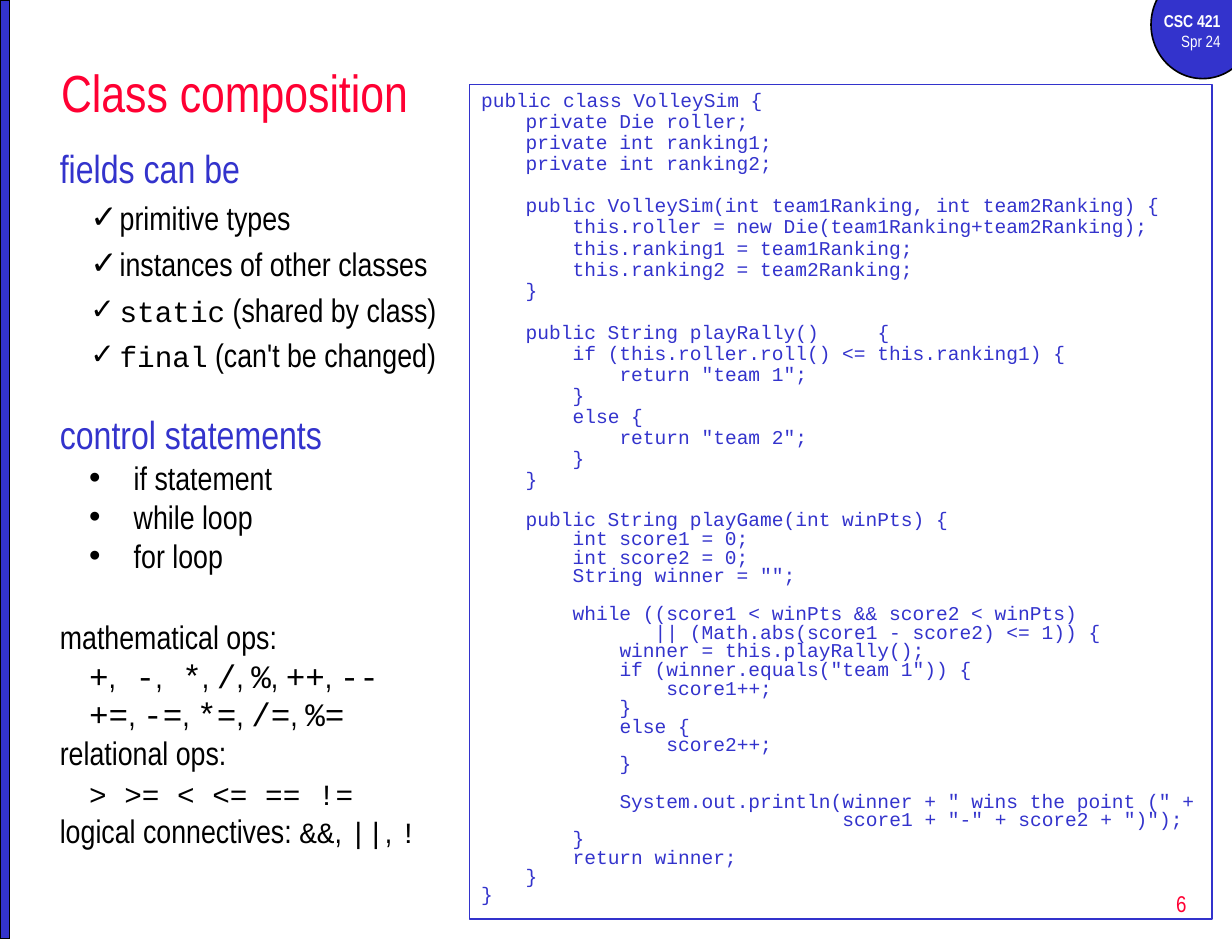
import pptx
import pptx.util
import pptx.dml.color
import pptx.enum.shapes
import pptx.enum.text
import pptx.oxml.ns
import lxml.etree

Inches, Pt = pptx.util.Inches, pptx.util.Pt
RGBColor = pptx.dml.color.RGBColor
ALIGN = pptx.enum.text.PP_ALIGN
ANCHOR = pptx.enum.text.MSO_ANCHOR
SHAPE = pptx.enum.shapes.MSO_SHAPE

BLUE = RGBColor(0x33, 0x33, 0xCC)
RED = RGBColor(0xFF, 0x00, 0x33)
BLACK = RGBColor(0, 0, 0)
WHITE = RGBColor(0xFF, 0xFF, 0xFF)
SANS, MONO = "Arial Narrow", "Courier New"

# Content: `...` marks code
TITLE = "Class composition"
COURSE = [("CSC 421", 10.5, True), ("Spr 24", 10, False)]
PAGE = "6"

# Style: size, code size, colour, line height, left margin, first indent, bullet
STYLES = {
    "heading": (24, 24, BLUE, 29, 0, 0, None),
    "check": (20, 18, BLACK, 24, 0.51, -0.25, "✓"),
    "dot": (20, 18, BLACK, 24, 0.63, -0.38, "•"),
    "plain": (20, 18, BLACK, 24, 0, 0, None),
    "math": (20, 20, BLACK, 23.5, 0.25, 0, None),
    "relations": (20, 18, BLACK, 24, 0.25, 0, None),
}
# Style, space before in points, text
NOTES = [
    ("heading", 0, "fields can be"),
    ("check", 4, "primitive types"),
    ("check", 4, "instances of other classes"),
    ("check", 4, "`static` (shared by class)"),
    ("check", 4, "`final` (can't be changed)"),
    ("heading", 22, "control statements"),
    ("dot", 0, "if statement"),
    ("dot", 0, "while loop"),
    ("dot", 0, "for loop"),
    ("plain", 26, "mathematical ops:"),
    ("math", 0, "`+`,` -`,` *`, `/`, `%`, `++`, `--`"),
    ("math", 0, "`+=`, `-=`, `*=`, `/=`, `%=`"),
    ("plain", 0, "relational ops:"),
    ("relations", 0, "`> >= < <= == !=`"),
    ("plain", 0, "logical connectives: `&&`, `||`, `!`"),
]

# Class source in two parts, each with its line height in points
CODE = [
    (12.94, """public class VolleySim {
    private Die roller;
    private int ranking1;
    private int ranking2;

    public VolleySim(int team1Ranking, int team2Ranking) {
        this.roller = new Die(team1Ranking+team2Ranking);
        this.ranking1 = team1Ranking;
        this.ranking2 = team2Ranking;
    }

    public String playRally() \t{
        if (this.roller.roll() <= this.ranking1) {
            return "team 1";
        }
        else {
            return "team 2";
        }
    }

"""),
    (11.5, """    public String playGame(int winPts) {
        int score1 = 0;
        int score2 = 0;
        String winner = "";

        while ((score1 < winPts && score2 < winPts)
               || (Math.abs(score1 - score2) <= 1)) {
            winner = this.playRally();
            if (winner.equals("team 1")) {
                score1++;
            }
            else {
                score2++;
            }

            System.out.println(winner + " wins the point (" +
                               score1 + "-" + score2 + ")");
        }
        return winner;
    }
}"""),
]
CHAR_WIDTH = 0.1  # one 12 pt code character, in inches


def place(shape, left, top, width, height):
    shape.left, shape.top = Inches(left), Inches(top)
    shape.width, shape.height = Inches(width), Inches(height)


def style_run(run, font, size, color, bold=False):
    run.font.name, run.font.size, run.font.bold = font, Pt(size), bold
    run.font.color.rgb = color


def style_paragraph(paragraph, line, before, left=0, first=0, bullet=None):
    paragraph.alignment = ALIGN.LEFT
    paragraph.line_spacing = Pt(line)
    paragraph.space_before, paragraph.space_after = Pt(before), Pt(0)
    props = paragraph._p.get_or_add_pPr()
    props.set("marL", str(Inches(left)))
    props.set("indent", str(Inches(first)))
    tag = "a:buChar" if bullet else "a:buNone"
    mark = lxml.etree.SubElement(props, pptx.oxml.ns.qn(tag))
    if bullet:
        mark.set("char", bullet)


def paragraphs(frame):
    """Yield the first paragraph, then new ones."""
    yield frame.paragraphs[0]
    while True:
        yield frame.add_paragraph()


def add_decoration(slide, kind, *box):
    shape = slide.shapes.add_shape(kind, 0, 0, 0, 0)
    place(shape, *box)
    shape.shadow.inherit = False
    shape.fill.solid()
    shape.fill.fore_color.rgb = BLUE
    shape.line.color.rgb = BLACK
    shape.line.width = Pt(1)


def add_label(slide, lines, color, anchor, *box):
    label = slide.shapes.add_textbox(0, 0, 0, 0)
    place(label, *box)
    frame = label.text_frame
    frame.word_wrap = True
    frame.vertical_anchor = anchor
    # Lines come first so that no surplus paragraph is made
    for (text, size, bold), paragraph in zip(lines, paragraphs(frame)):
        paragraph.text = text
        paragraph.alignment = ALIGN.RIGHT
        style_run(paragraph.runs[0], SANS, size, color, bold)


def prepare(panel, *box):
    place(panel, *box)
    panel.text_frame.auto_size = pptx.enum.text.MSO_AUTO_SIZE.NONE
    panel.text_frame.vertical_anchor = ANCHOR.TOP
    return paragraphs(panel.text_frame)


def main():
    deck = pptx.Presentation()
    deck.slide_width, deck.slide_height = Inches(10.5), Inches(8)
    slide = deck.slides.add_slide(deck.slide_layouts[3])
    title, notes, code = slide.placeholders

    # Course badge and side bar
    add_decoration(slide, SHAPE.OVAL, 9.81, -0.25, 0.88, 0.92)
    add_decoration(slide, SHAPE.RECTANGLE, 0, 0, 0.08, 8)
    add_label(slide, COURSE, WHITE, ANCHOR.TOP, 9.67, 0.04, 0.83, 0.46)

    # Title
    place(title, 0.42, 0.41, 9.83, 0.75)
    title.text_frame.text = TITLE
    title.text_frame.vertical_anchor = ANCHOR.MIDDLE
    title.text_frame.paragraphs[0].alignment = ALIGN.LEFT
    style_run(title.text_frame.paragraphs[0].runs[0], SANS, 32, RED)

    # Notes on the left
    lines = prepare(notes, 0.41, 1.18, 3.47, 6.27)
    notes.fill.solid()
    notes.fill.fore_color.rgb = WHITE
    for (style, before, text), paragraph in zip(NOTES, lines):
        size, code_size, color, line, left, first, bullet = STYLES[style]
        style_paragraph(paragraph, line, before, left, first, bullet)
        for i, part in enumerate(text.split("`")):
            if part:
                run = paragraph.add_run()
                run.text = part
                font = (MONO, code_size) if i % 2 else (SANS, size)
                style_run(run, *font, color)

    # Class source on the right; an empty line becomes space before the next
    lines = prepare(code, 4, 0.72, 6.33, 7.11)
    code.line.color.rgb = BLUE
    code.line.width = Pt(0.75)
    gap = 0
    for line, source in CODE:
        for text in source.splitlines():
            statement = text.lstrip()
            if not statement:
                gap = line
                continue
            columns = len(text) - len(statement)
            left = max(0, columns * CHAR_WIDTH - 0.02)
            paragraph = next(lines)
            paragraph.text = statement
            style_paragraph(paragraph, line, gap, left)
            style_run(paragraph.runs[0], MONO, 12, BLUE)
            gap = 0

    # Page number
    add_label(slide, [(PAGE, 14, False)], RED, ANCHOR.MIDDLE, 8.02, 7.43, 2.19, 0.53)
    deck.save("out.pptx")


if __name__ == "__main__":
    main()
